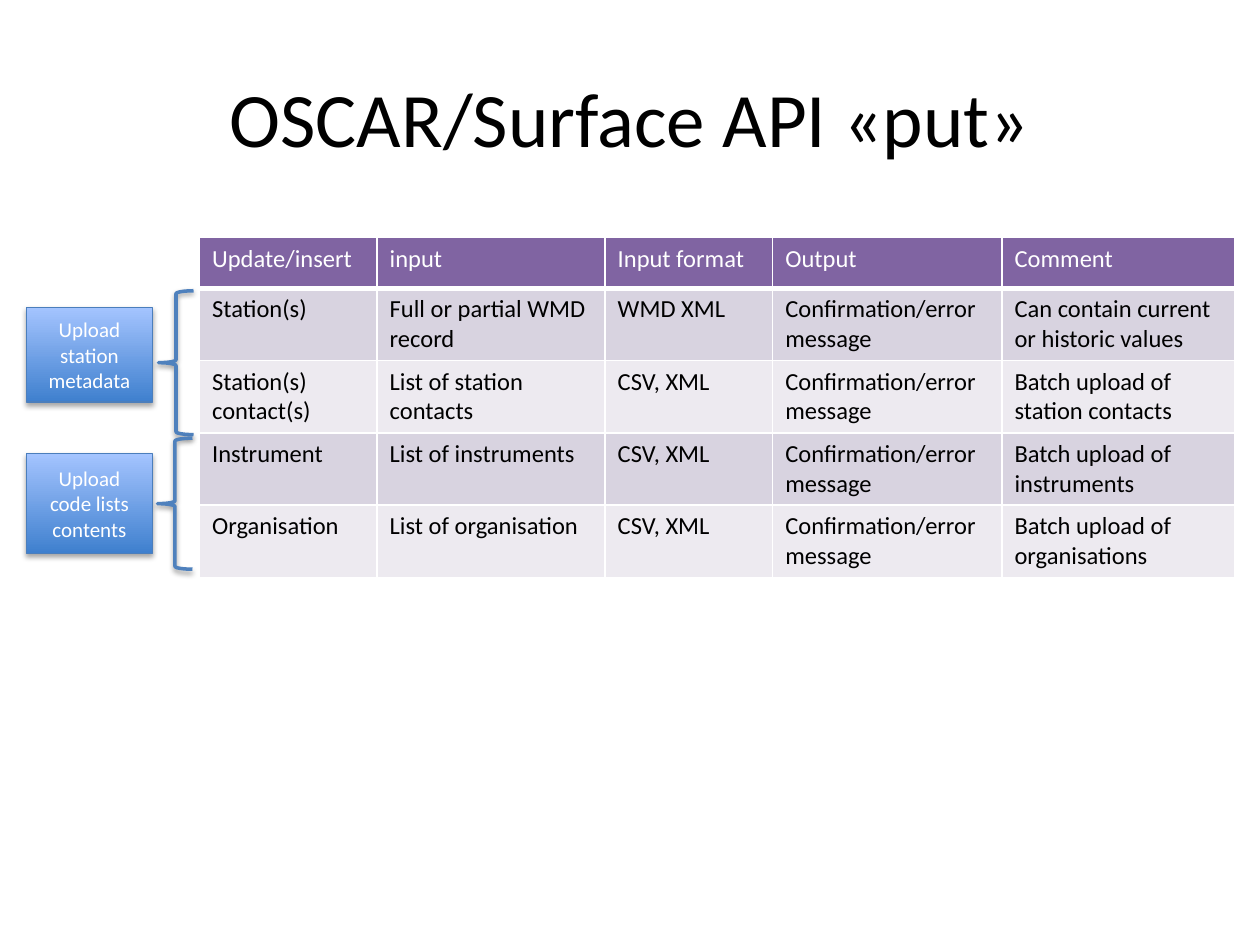
from lxml.etree import SubElement
from pptx import Presentation
from pptx.dml.color import RGBColor
from pptx.enum.shapes import MSO_SHAPE
from pptx.enum.text import MSO_ANCHOR, PP_ALIGN
from pptx.oxml.ns import qn
from pptx.util import Pt

WHITE = RGBColor(0xFF, 0xFF, 0xFF)
BLACK = RGBColor(0x00, 0x00, 0x00)
PURPLE = RGBColor(0x80, 0x64, 0xA2)
BANDS = (RGBColor(0xD8, 0xD3, 0xE0), RGBColor(0xED, 0xEA, 0xF0))
BLUE_DARK = RGBColor(0x3F, 0x80, 0xCE)
BLUE_LIGHT = RGBColor(0xA4, 0xC4, 0xFF)
BOX_EDGE = RGBColor(0x4B, 0x7E, 0xBC)
BRACE_BLUE = RGBColor(0x4F, 0x81, 0xBD)

TITLE_FONT = {"name": "Calibri", "size": Pt(44)}
CELL_FONT = {"name": "Calibri", "size": Pt(14), "bold": False}
LABEL_FONT = {"name": "Calibri", "size": Pt(12)}

COLUMN_WIDTHS = (101.5, 130.3, 95.8, 131, 133.2)
HEADER_HEIGHT, ROW_HEIGHT = 29, 41.2
ROWS = (
    ("Update/insert", "input", "Input format", "Output", "Comment"),
    ("Station(s)", "Full or partial WMD record", "WMD XML",
     "Confirmation/error message", "Can contain current or historic values"),
    ("Station(s) contact(s)", "List of station contacts", "CSV, XML",
     "Confirmation/error message", "Batch upload of station contacts"),
    ("Instrument", "List of instruments", "CSV, XML",
     "Confirmation/error message", "Batch upload of instruments"),
    ("Organisation", "List of organisation", "CSV, XML",
     "Confirmation/error message", "Batch upload of organisations"),
)
GROUPS = (
    ("Upload station metadata", (15.1, 175.7, 72, 54), (90.6, 166.2, 20, 82.2)),
    ("Upload code lists contents", (15.1, 259.2, 72, 57), (90, 250.4, 20, 74.9)),
)


def write_text(frame, text, font_format, color, align=PP_ALIGN.LEFT):
    """Put one formatted paragraph in a text frame."""
    frame.word_wrap = True
    para = frame.paragraphs[0]
    para.alignment = align
    span = para.add_run()
    span.text = text
    for name, value in font_format.items():
        setattr(span.font, name, value)
    span.font.color.rgb = color


def add_title(page, box, text):
    """Place the centred slide title in the box."""
    frame = page.shapes.add_textbox(*map(Pt, box)).text_frame
    frame.vertical_anchor = MSO_ANCHOR.MIDDLE
    write_text(frame, text, TITLE_FONT, BLACK, PP_ALIGN.CENTER)


def set_borders(cell, bottom_width):
    """Draw white rules on all four sides of a cell."""
    properties = cell._tc.get_or_add_tcPr()
    for side, width in (("L", 1), ("R", 1), ("T", 1), ("B", bottom_width)):
        line = SubElement(properties, qn(f"a:ln{side}"), w=str(Pt(width)))
        fill = SubElement(line, qn("a:solidFill"))
        SubElement(fill, qn("a:srgbClr"), val=str(WHITE))


def add_upload_table(page, left, top):
    """Place the banded table with its corner at left and top."""
    height = HEADER_HEIGHT + ROW_HEIGHT * (len(ROWS) - 1)
    box = (left, top, sum(COLUMN_WIDTHS), height)
    table = page.shapes.add_table(len(ROWS), len(COLUMN_WIDTHS), *map(Pt, box)).table
    for column, width in zip(table.columns, COLUMN_WIDTHS):
        column.width = Pt(width)
    for index, texts in enumerate(ROWS):
        header = index == 0
        table.rows[index].height = Pt(HEADER_HEIGHT if header else ROW_HEIGHT)
        for cell, text in zip(table.rows[index].cells, texts):
            set_borders(cell, 3 if header else 1)
            cell.fill.solid()
            cell.fill.fore_color.rgb = PURPLE if header else BANDS[(index - 1) % 2]
            write_text(cell.text_frame, text, CELL_FONT, WHITE if header else BLACK)


def add_shadow(shape, distance, opacity):
    """Give a shape a soft shadow straight below it."""
    shape.shadow.inherit = False
    effects = shape._element.spPr.find(qn("a:effectLst"))
    shadow = SubElement(effects, qn("a:outerShdw"), blurRad=str(Pt(3.1)),
                        dist=str(Pt(distance)), dir="5400000", rotWithShape="0")
    color = SubElement(shadow, qn("a:srgbClr"), val=str(BLACK))
    SubElement(color, qn("a:alpha"), val=str(opacity * 1000))


def add_group_label(page, text, label_box, brace_box):
    """Place a gradient label and the brace that ties it to table rows."""
    label = page.shapes.add_shape(MSO_SHAPE.RECTANGLE, *map(Pt, label_box))
    label.fill.gradient()
    label.fill.gradient_angle = 90
    for stop, color in zip(label.fill.gradient_stops, (BLUE_DARK, BLUE_LIGHT)):
        stop.color.rgb = color
    label.line.color.rgb = BOX_EDGE
    label.line.width = Pt(0.75)
    add_shadow(label, 1.8, 35)
    label.text_frame.vertical_anchor = MSO_ANCHOR.MIDDLE
    write_text(label.text_frame, text, LABEL_FONT, WHITE, PP_ALIGN.CENTER)

    brace = page.shapes.add_shape(MSO_SHAPE.LEFT_BRACE, *map(Pt, brace_box))
    brace.fill.background()
    brace.line.color.rgb = BRACE_BLUE
    brace.line.width = Pt(2)
    add_shadow(brace, 1.6, 38)


def main():
    """Build and save the deck."""
    deck = Presentation()
    deck.slide_width, deck.slide_height = Pt(720), Pt(540)
    page = deck.slides.add_slide(deck.slide_layouts[6])
    add_upload_table(page, 114, 135.7)
    add_title(page, (36, 21.6, 648, 90), "OSCAR/Surface API «put»")
    for group in GROUPS:
        add_group_label(page, *group)
    deck.save("out.pptx")


if __name__ == "__main__":
    main()
